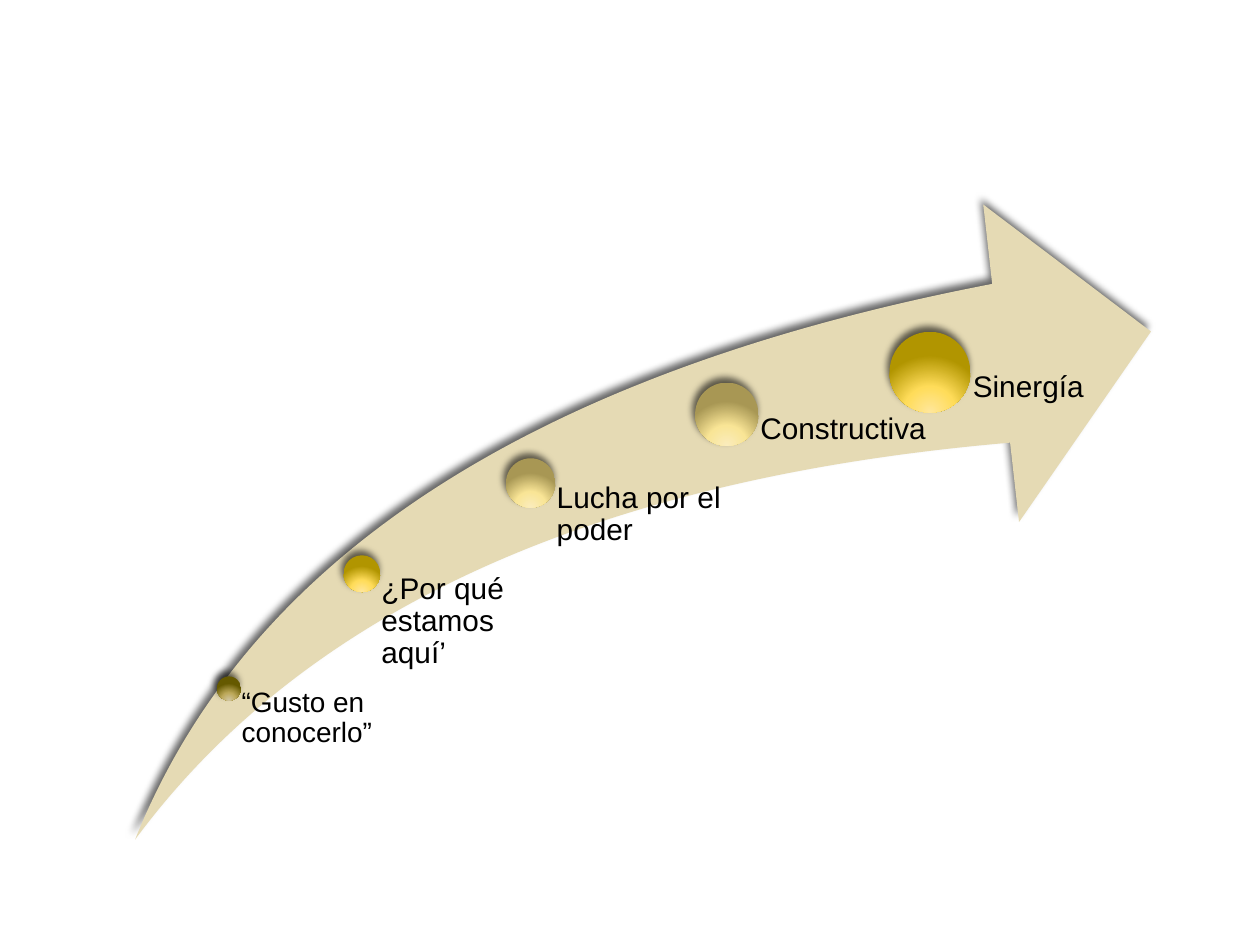
from pptx import Presentation
from pptx.dml.color import RGBColor
from pptx.enum.shapes import MSO_SHAPE as Kind
from pptx.oxml import parse_xml
from pptx.oxml.ns import nsdecls
from pptx.util import Pt


def style(shape, fill):
    """Fill with one hex colour, or a glow of three; drop the line, cast a shadow."""
    if isinstance(fill, str):
        shape.fill.solid()
        shape.fill.fore_color.rgb = RGBColor.from_string(fill)
    else:
        shape.fill.gradient()
        stops = "".join(
            f'<a:gs pos="{pos}"><a:srgbClr val="{tone}"/></a:gs>'
            for pos, tone in zip((0, 46000, 100000), fill))
        glow = parse_xml(
            f'<a:gradFill {nsdecls("a")} rotWithShape="1"><a:gsLst>{stops}</a:gsLst>'
            '<a:path path="circle"><a:fillToRect l="50000" t="155000" '
            'r="50000" b="-55000"/></a:path></a:gradFill>')
        props = shape._element.spPr
        props.replace(props.find("{*}gradFill"), glow)
    shape.line.fill.background()
    shape.shadow.inherit = False
    shape._element.spPr.find("{*}effectLst").append(parse_xml(
        f'<a:outerShdw {nsdecls("a")} blurRad="{Pt(4)}" dist="{Pt(3)}" '
        f'dir="{245 * 60000}" rotWithShape="0"><a:srgbClr val="000000">'
        '<a:alpha val="60000"/></a:srgbClr></a:outerShdw>'))


def write(text, left, top, width, height, inset=0, size=17, color="000000"):
    box = slide.shapes.add_textbox(Pt(left), Pt(top), Pt(width), Pt(height))
    frame = box.text_frame
    frame.word_wrap = True
    frame.margin_left = Pt(inset)
    frame.margin_top = frame.margin_right = frame.margin_bottom = 0
    para = frame.paragraphs[0]
    para.line_spacing = 0.9
    run = para.add_run()
    run.text = text
    run.font.name = "Arial"
    run.font.size = Pt(size)
    run.font.color.rgb = RGBColor.from_string(color)


deck = Presentation()
deck.slide_width, deck.slide_height = Pt(720), Pt(540)
slide = deck.slides.add_slide(deck.slide_layouts[6])

BASE = 479.8  # bottom of the arrow and of every label
arrow = slide.shapes.add_shape(
    Kind.SWOOSH_ARROW, Pt(77.2), Pt(116.9), Pt(580.5), Pt(BASE - 116.9))
arrow.adjustments[0] = arrow.adjustments[1] = 0.25
style(arrow, "E5DAB4")

DARK = "D2C7A2", "BDA95A", "655900"
GOLD = "FFE79D", "FFDC59", "B19500"
PALE = "FAECBD", "F9E596", "A89754"

# Label, centre x and y of the ball, its diameter, label width, text size, tones
stages = [
    ("“Gusto en conocerlo”", 130.8, 393.4, 13.8, 88, 16, DARK),
    ("¿Por qué estamos aquí’", 206.8, 327.8, 21, 96.4, 17, GOLD),
    ("Lucha por el poder", 303.2, 276, 28.2, 112, 17, PALE),
    ("Constructiva", 415.3, 236.7, 36.2, 116, 17, PALE),
    ("Sinergía", 531.4, 212.7, 46.2, 116, 17, GOLD),
]
for text, x, y, size, width, font, tones in stages:
    ball = slide.shapes.add_shape(
        Kind.OVAL, Pt(x - size / 2), Pt(y - size / 2), Pt(size), Pt(size))
    style(ball, tones)
    write(text, x, y, width, BASE - y, inset=0.53 * size, size=font)

deck.save("out.pptx")
